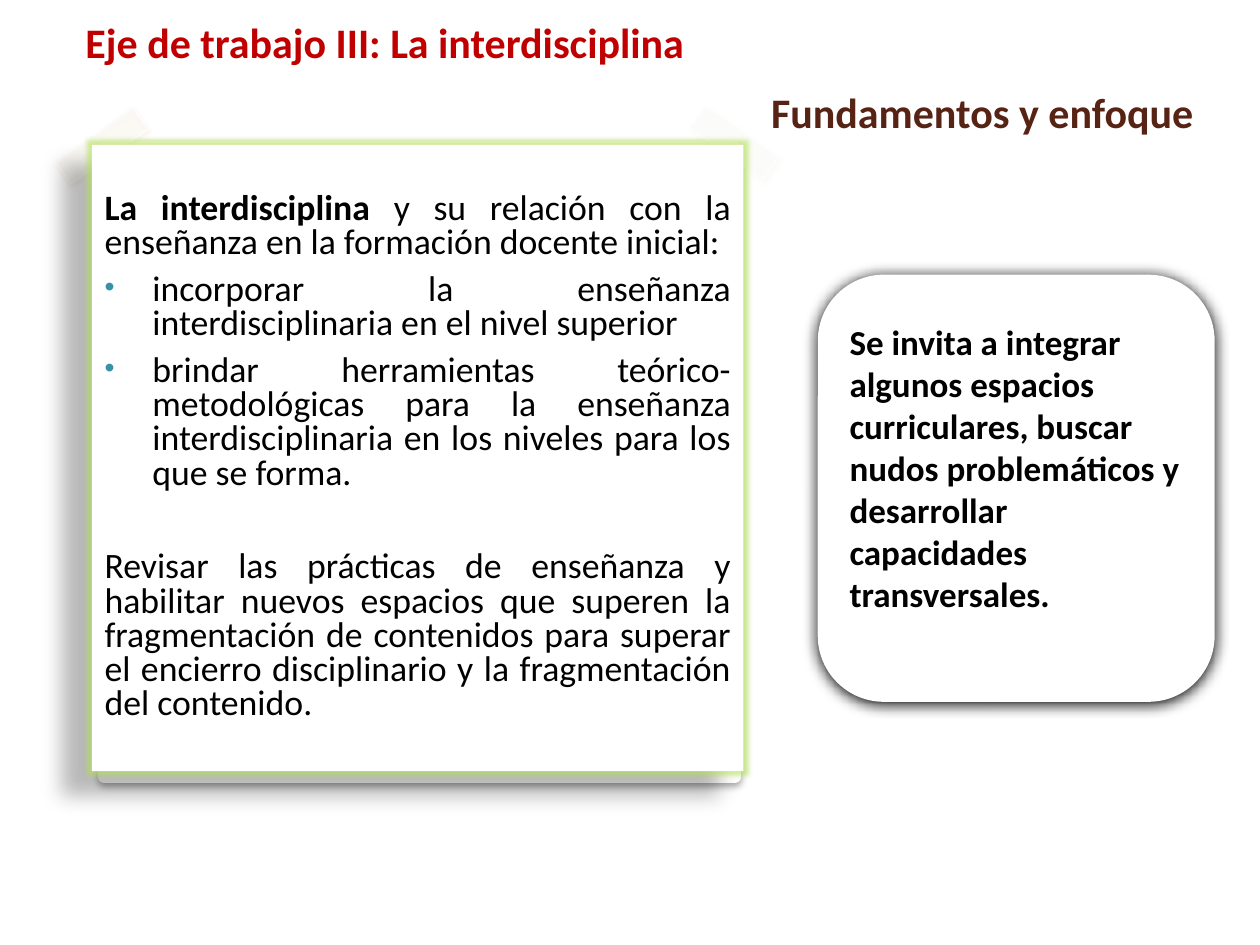
import pptx
import pptx.dml.color
import pptx.enum.shapes
import pptx.enum.text
import pptx.oxml
import pptx.oxml.ns
import pptx.util

Inches = pptx.util.Inches
Pt = pptx.util.Pt
RGB = pptx.dml.color.RGBColor
MSO = pptx.enum.shapes.MSO_SHAPE
ANCHOR = pptx.enum.text.MSO_ANCHOR
ALIGN = pptx.enum.text.PP_ALIGN
NS = pptx.oxml.ns.nsdecls("a")

WHITE = RGB(0xFF, 0xFF, 0xFF)
BLACK = RGB(0, 0, 0)
RED = RGB(0xC0, 0, 0)
BROWN = RGB(0x57, 0x23, 0x14)
TEAL = RGB(0x38, 0x91, 0xA7)
TAPE = RGB(0xFB, 0xFB, 0xFB)
TAPE_SHADOW_LEFT = RGB(0xEB, 0xDA, 0xB2)
TAPE_SHADOW_RIGHT = RGB(0xE7, 0xDE, 0xC9)
GREEN = RGB(0xB4, 0xE0, 0x5A)


class SlideBuilder:
    font = "Calibri"

    def __init__(self, prs):
        self.slide = prs.slides.add_slide(prs.slide_layouts[1])

    def shape(self, kind, box, fill=WHITE, line=None, rotation=0, alpha=None):
        sp = self.slide.shapes.add_shape(kind, *map(Inches, box))
        sp.rotation = rotation
        self.paint(sp, fill, line)
        if alpha:
            color = sp.fill._xPr.find(".//" + pptx.oxml.ns.qn("a:srgbClr"))
            color.append(pptx.oxml.parse_xml(f'<a:alpha {NS} val="{alpha * 1000}"/>'))
        return sp

    def paint(self, sp, fill, line=None):
        sp.fill.solid()
        sp.fill.fore_color.rgb = fill
        if line:
            sp.line.color.rgb = WHITE
            sp.line.width = Pt(line)
        else:
            sp.line.fill.background()

    def effects(self, sp, color, alpha, blur, dist, angle, glow=None):
        """Outer shadow, with an optional (colour, radius) glow."""
        sp.shadow.inherit = False
        effects = sp._element.spPr.find(pptx.oxml.ns.qn("a:effectLst"))
        if glow:
            effects.append(pptx.oxml.parse_xml(
                f'<a:glow {NS} rad="{Pt(glow[1])}"><a:srgbClr val="{glow[0]}">'
                f'<a:alpha val="60000"/></a:srgbClr></a:glow>'))
        effects.append(pptx.oxml.parse_xml(
            f'<a:outerShdw {NS} blurRad="{Pt(blur)}" dist="{Pt(dist)}" '
            f'dir="{angle * 60000}" algn="ctr" rotWithShape="0">'
            f'<a:srgbClr val="{color}"><a:alpha val="{alpha * 1000}"/></a:srgbClr>'
            f'</a:outerShdw>'))

    def textbox(self, box):
        return self.slide.shapes.add_textbox(*map(Inches, box))

    def placeholder(self, idx, box):
        """Place a template placeholder in front of what is drawn so far."""
        sp = self.slide.placeholders[idx]
        sp.left, sp.top, sp.width, sp.height = map(Inches, box)
        self.slide.shapes._spTree.append(sp._element)
        return sp

    def frame(self, sp, anchor, **margins):
        tf = sp.text_frame
        settings = {"word_wrap": True, "vertical_anchor": anchor,
                    "auto_size": pptx.enum.text.MSO_AUTO_SIZE.NONE, **margins}
        for name, value in settings.items():
            setattr(tf, name, value)
        return tf

    def paragraph(self, p, runs, size, color=BLACK, indent=0, bullet=False, **fmt):
        """Write (text, bold) runs with the given paragraph format."""
        for name, value in {"alignment": ALIGN.LEFT, **fmt}.items():
            setattr(p, name, value)
        pPr = p._p.get_or_add_pPr()
        pPr.set("marL", str(Inches(indent)))
        pPr.set("indent", str(-Inches(indent) if bullet else 0))
        marks = [f'<a:buClr {NS}><a:srgbClr val="{TEAL}"/></a:buClr>',
                 f'<a:buSzPct {NS} val="80000"/>',
                 f'<a:buFont {NS} typeface="Arial"/>',
                 f'<a:buChar {NS} char="•"/>'] if bullet else [f'<a:buNone {NS}/>']
        for mark in marks:
            pPr.append(pptx.oxml.parse_xml(mark))
        for text, bold in runs:
            r = p.add_run()
            r.text = text
            for name, value in {"name": self.font, "size": Pt(size), "bold": bold}.items():
                setattr(r.font, name, value)
            r.font.color.rgb = color


def main():
    prs = pptx.Presentation()
    prs.slide_width, prs.slide_height = Inches(10), Inches(7.5)
    s = SlideBuilder(prs)

    # Paper sheet and its two strips of tape
    sheet = s.shape(MSO.RECTANGLE, (0.83, 1.17, 5, 5), line=7)
    s.effects(sheet, BLACK, 35, 4.4, 1.5, 90)
    for box, rotation, shadow, alpha in (
            ((0.43, 1.04, 0.75, 0.22), 324.5, TAPE_SHADOW_LEFT, 40),
            ((5.47, 1.02, 0.71, 0.22), 35.1, TAPE_SHADOW_RIGHT, 20)):
        tape = s.shape(MSO.FLOWCHART_PROCESS, box, TAPE, 0.5, rotation, alpha=45)
        s.effects(tape, shadow, alpha, 2, 2, 55)

    # Title
    title = s.placeholder(0, (6.02, 0.64, 3.98, 0.83))
    tf = s.frame(title, ANCHOR.TOP)
    s.paragraph(tf.paragraphs[0], [("Fundamentos y enfoque", True)], 24, BROWN)

    # Body text on the sheet
    body = s.placeholder(1, (0.73, 1.15, 5.17, 4.97))
    s.paint(body, WHITE)
    s.effects(body, BLACK, 28, 11.8, 19.7, 141, glow=(GREEN, 5))
    tf = s.frame(body, ANCHOR.MIDDLE)
    items = (
        ([("La interdisciplina ", True),
          ("y su relación con la enseñanza en la formación docente inicial:", False)], False, 0),
        ([("incorporar la enseñanza interdisciplinaria en el nivel superior", False)], True, 7),
        ([("brindar herramientas teórico- metodológicas para la enseñanza "
           "interdisciplinaria en los niveles para los que se forma.", False)], True, 7),
        ([("Revisar las prácticas de enseñanza y habilitar nuevos espacios que superen la "
           "fragmentación de contenidos para superar el encierro disciplinario y la "
           "fragmentación del contenido.", False)], False, 34),
    )
    for i, (runs, bullet, gap) in enumerate(items):
        p = tf.add_paragraph() if i else tf.paragraphs[0]
        s.paragraph(p, runs, 20.4, indent=0.38 if bullet else 0, bullet=bullet,
                    alignment=ALIGN.JUSTIFY, line_spacing=0.8, space_before=Pt(gap))

    # Section heading
    tf = s.frame(s.textbox((0.49, 0.08, 5.87, 0.5)), ANCHOR.TOP)
    s.paragraph(tf.paragraphs[0], [("Eje de trabajo III: La interdisciplina", True)],
                24, RED, indent=0.09)

    # Invitation card
    card = s.shape(MSO.ROUNDED_RECTANGLE, (6.49, 2.18, 3.15, 3.39))
    s.effects(card, BLACK, 100, 8.5, 1, 90)
    tf = s.frame(card, ANCHOR.MIDDLE, margin_bottom=Inches(0.38))
    s.paragraph(tf.paragraphs[0], [(
        "Se invita a integrar algunos espacios curriculares, buscar nudos "
        "problemáticos y desarrollar capacidades transversales.", True)], 20)

    prs.save("out.pptx")


if __name__ == "__main__":
    main()
